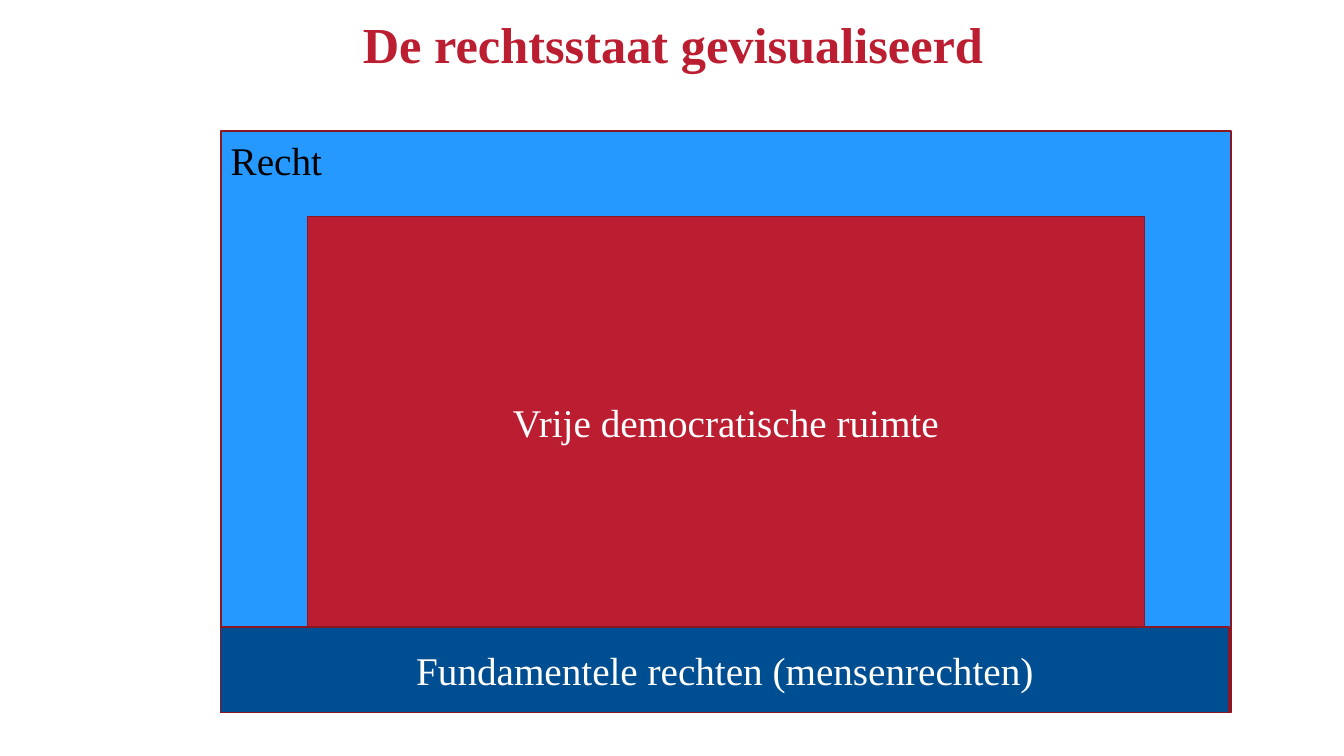
from pptx import Presentation
from pptx.dml.color import RGBColor
from pptx.enum.shapes import MSO_SHAPE as Shape
from pptx.enum.text import MSO_ANCHOR as Anchor, PP_ALIGN as Align
from pptx.util import Inches, Pt

FONT = "Times New Roman"
RED, EDGE, SKY, NAVY = "BC1E31", "8B1624", "2599FF", "004E92"
WHITE, BLACK = "FFFFFF", "000000"


def color(code):
    return RGBColor.from_string(code)


def write(shape, text, size, code, align, anchor, bold=False):
    frame = shape.text_frame
    frame.word_wrap = True
    frame.vertical_anchor = anchor
    line = frame.paragraphs[0]
    line.text = text
    line.alignment = align
    font = line.font
    font.name, font.size, font.bold = FONT, Pt(size), bold
    font.color.rgb = color(code)


def label(slide, box, text, size, code, anchor, bold=False):
    shape = slide.shapes.add_textbox(*map(Inches, box))
    write(shape, text, size, code, Align.LEFT, anchor, bold)


def block(slide, box, fill, text=""):
    shape = slide.shapes.add_shape(Shape.RECTANGLE, *map(Inches, box))
    shape.shadow.inherit = False
    shape.fill.solid()
    shape.fill.fore_color.rgb = color(fill)
    shape.line.color.rgb = color(EDGE)
    shape.line.width = Pt(1)
    if text:
        write(shape, text, 28, WHITE, Align.CENTER, Anchor.MIDDLE)


def diagram(slide, left, top, width, height):
    """Draw law as a frame around the free space, on a base of rights."""
    side, base = 0.86, 0.85
    floor = top + height - base
    block(slide, (left, top, width, height), SKY)
    block(slide, (left + side, top + base, width - 2 * side, height - 2 * base),
          RED, "Vrije democratische ruimte")
    label(slide, (left, top, 1.66, 0.57), "Recht", 28, BLACK, Anchor.TOP)
    block(slide, (left, floor, width - 0.02, base), NAVY,
          "Fundamentele rechten (mensenrechten)")


def main():
    deck = Presentation()
    deck.slide_width, deck.slide_height = Inches(13.33), Inches(7.5)
    slide = deck.slides.add_slide(deck.slide_layouts[6])
    label(slide, (3.5, 0, 9.5, 0.78), "De rechtsstaat gevisualiseerd",
          36, RED, Anchor.BOTTOM, bold=True)
    diagram(slide, 2.19, 1.3, 10.02, 5.77)
    deck.save("out.pptx")


if __name__ == "__main__":
    main()
